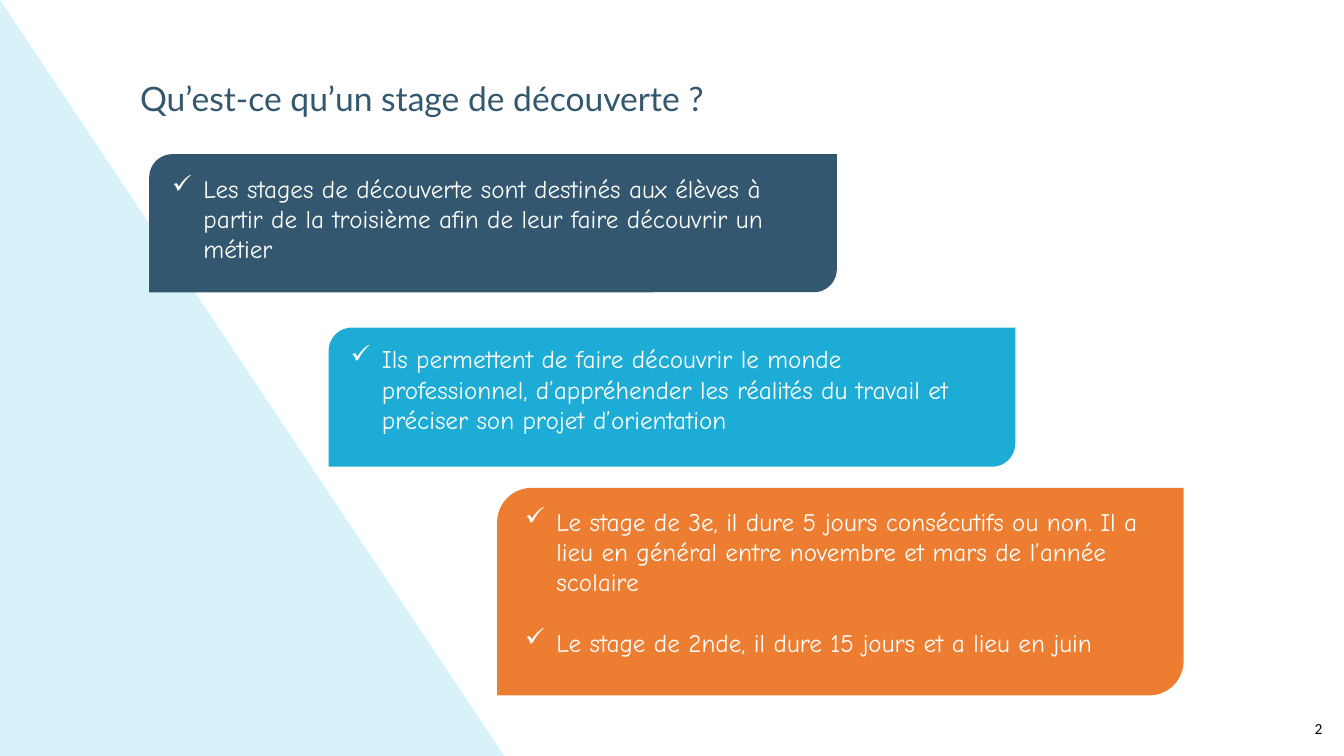
from lxml import etree
from pptx import Presentation
from pptx import util as u
from pptx.dml.color import RGBColor
from pptx.enum import shapes, text
from pptx.oxml import ns

WIDTH, HEIGHT = 13.33, 7.5
PALE_BLUE = RGBColor(0xD7, 0xF2, 0xF9)
NAVY = RGBColor(0x33, 0x57, 0x6E)
CYAN = RGBColor(0x1D, 0xAC, 0xD5)
ORANGE = RGBColor(0xED, 0x7D, 0x31)
WHITE = RGBColor(0xFF, 0xFF, 0xFF)
BLACK = RGBColor(0, 0, 0)

CARDS = [
    ((1.48, 1.53, 6.82, 1.37), (0.13, 0.14), NAVY, [
        "Les stages de découverte sont destinés aux élèves à partir de la "
        "troisième afin de leur faire découvrir un métier"]),
    ((3.26, 3.25, 6.81, 1.38), (0.12, 0.11), CYAN, [
        "Ils permettent de faire découvrir le monde professionnel, "
        "d’appréhender les réalités du travail et préciser son projet "
        "d’orientation"]),
    ((4.93, 4.84, 6.81, 2.06), (0.18, 0.13), ORANGE, [
        "Le stage de 3e, il dure 5 jours consécutifs ou non. Il a lieu en "
        "général entre novembre et mars de l’année scolaire",
        "Le stage de 2nde, il dure 15 jours et a lieu en juin"]),
]


def add_panel(slide, kind, box, color):
    """Add a flat filled shape without outline or shadow."""
    shape = slide.shapes.add_shape(kind, *map(u.Inches, box))
    shape.shadow.inherit = False
    shape.fill.solid()
    shape.fill.fore_color.rgb = color
    shape.line.fill.background()
    return shape


def add_text(slide, box, lines, size, font, color):
    """Add a wrapping text box with one paragraph per line and return its paragraphs."""
    frame = slide.shapes.add_textbox(*map(u.Inches, box)).text_frame
    frame.word_wrap = True
    frame.vertical_anchor = text.MSO_ANCHOR.TOP
    frame.text = "\n".join(lines)
    for paragraph in frame.paragraphs:
        for run in paragraph.runs:
            run.font.size = u.Pt(size)
            run.font.name = font
            run.font.color.rgb = color
    return frame.paragraphs


def add_check_bullet(paragraph):
    """Give a paragraph a hanging check mark."""
    properties = paragraph._p.get_or_add_pPr()
    properties.set("marL", str(u.Inches(0.31)))
    properties.set("indent", str(-u.Inches(0.31)))
    etree.SubElement(properties, ns.qn("a:buChar")).set("char", "✓")


def add_card(slide, box, inset, color, lines):
    """Add a coloured card with checked statements inside its box."""
    left, top, width, height = box
    across, down = inset
    add_panel(slide, shapes.MSO_SHAPE.ROUND_2_DIAG_RECTANGLE, box, color)
    text_box = (left + across, top + down, width - 2 * across, height - down)
    paragraphs = add_text(slide, text_box, lines, 18, "Comic Neue", WHITE)
    for index, paragraph in enumerate(paragraphs):
        add_check_bullet(paragraph)
        if index:
            paragraph.space_before = u.Pt(21.6)


def add_title(slide, box):
    """Add the slide title in its box."""
    title, = add_text(slide, box, ["Qu’est-ce qu’un stage de découverte ?"],
                      24, "Lato", NAVY)
    title.line_spacing = 0.9


def add_background(slide, box):
    """Add the pale corner triangle, with its right angle at the bottom left."""
    triangle = add_panel(slide, shapes.MSO_SHAPE.ISOSCELES_TRIANGLE, box, PALE_BLUE)
    triangle.adjustments[0] = 0


def main():
    """Build and save the slide."""
    presentation = Presentation()
    presentation.slide_width = u.Inches(WIDTH)
    presentation.slide_height = u.Inches(HEIGHT)
    slide = presentation.slides.add_slide(presentation.slide_layouts[6])
    add_background(slide, (0, 0, 5, HEIGHT))
    for card in CARDS:
        add_card(slide, *card)
    add_title(slide, (1.29, 0.77, 7.01, 0.77))
    add_text(slide, (WIDTH - 0.39, HEIGHT - 0.42, 0.33, 0.29), ["2"],
             11, "Calibri", BLACK)
    presentation.save("out.pptx")


if __name__ == "__main__":
    main()
